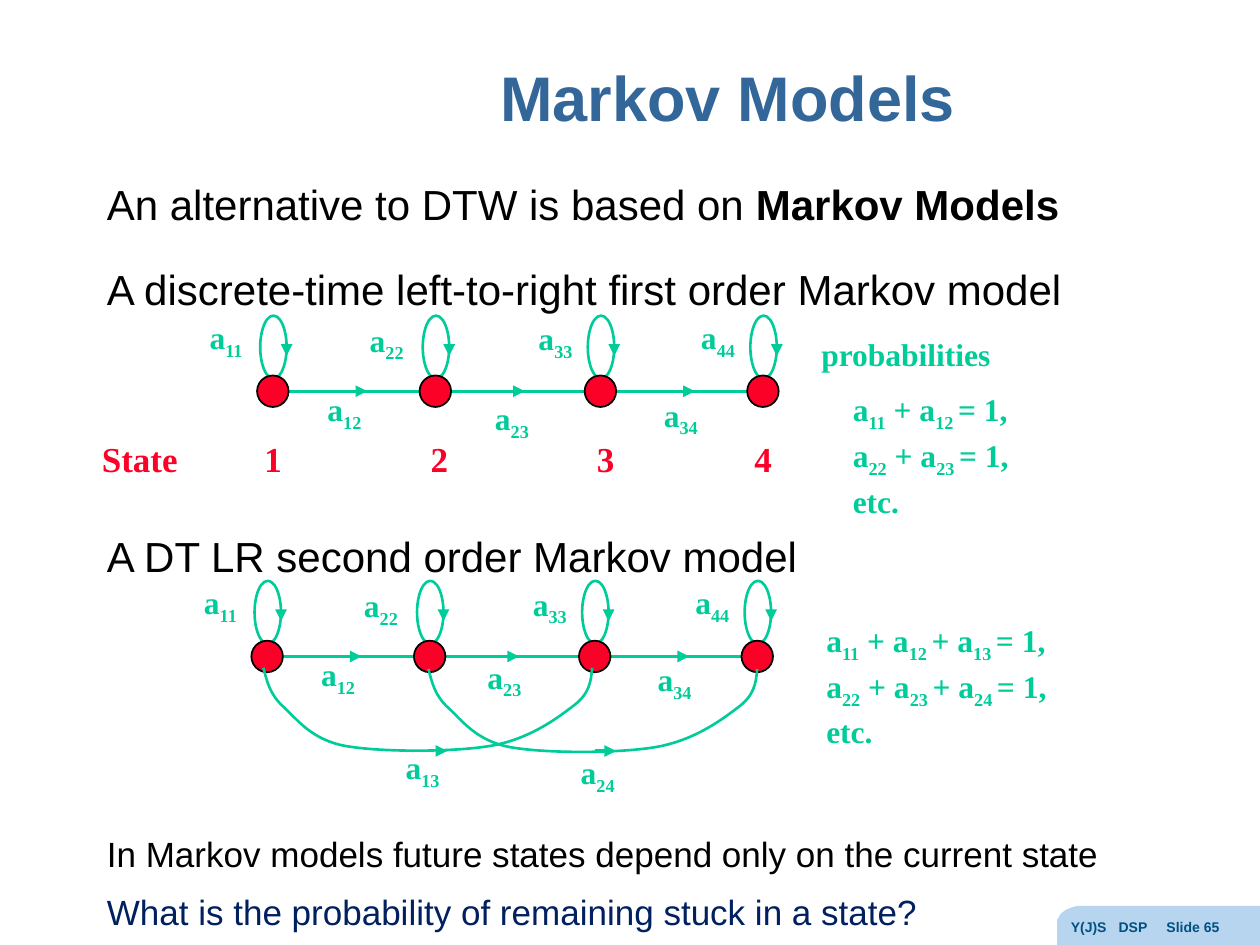
from itertools import pairwise

from lxml.etree import SubElement
from pptx import Presentation
from pptx.dml.color import RGBColor
from pptx.enum.shapes import MSO_CONNECTOR as Connector, MSO_SHAPE as Shape
from pptx.enum.text import MSO_ANCHOR as Anchor, PP_ALIGN as Align
from pptx.oxml.ns import qn
from pptx.util import Inches, Pt

GREEN = "00CC99"
RED = "FC0128"
BLACK = "000000"
SERIF = "Times New Roman"
STATE_OFFSETS = [0, 1.29, 2.6, 3.89]
ARROW_OFFSETS = [0.66, 0.62, 0.66]
SELF_LABELS = [("11", -0.6, -0.63), ("22", -0.62, -0.61), ("33", -0.59, -0.62), ("44", -0.59, -0.63)]
SKIP_CURVE = [
    [(0.03, 0.11), (0.05, 0.21), (0.16, 0.31)],
    [(0.27, 0.41), (0.38, 0.57), (0.65, 0.62)],
    [(0.93, 0.67), (1.5, 0.67), (1.8, 0.62)],
    [(2.1, 0.57), (2.32, 0.41), (2.45, 0.31)],
    [(2.59, 0.21), (2.6, 0.11), (2.61, 0)],
]
TAB_GAP = "\t"


def color(value):
    return RGBColor.from_string(value)


def style(shape, fill=None, line=None, weight=1):
    shape.shadow.inherit = False
    if fill:
        shape.fill.solid()
        shape.fill.fore_color.rgb = color(fill)
    else:
        shape.fill.background()
    if line:
        shape.line.color.rgb = color(line)
        shape.line.width = Pt(weight)
    else:
        shape.line.fill.background()


def add_ellipse(shapes, left, top, width, height, **look):
    ellipse = shapes.add_shape(Shape.OVAL, Inches(left), Inches(top), Inches(width), Inches(height))
    style(ellipse, **look)


def add_line(shapes, start, end, weight=1.5, arrow=False):
    line = shapes.add_connector(Connector.STRAIGHT, *map(Inches, (*start, *end)))
    line.line.color.rgb = color(GREEN)
    line.line.width = Pt(weight)
    if arrow:
        SubElement(line.line._get_or_add_ln(), qn("a:tailEnd"), type="triangle")
    SubElement(line._element.spPr, qn("a:effectLst"))


def add_outline(shapes, points, close=False, **look):
    corners = [(Inches(x), Inches(y)) for x, y in points]
    builder = shapes.build_freeform(*corners[0])
    builder.add_line_segments(corners[1:], close=close)
    outline = builder.convert_to_shape()
    style(outline, **look)
    return outline


def add_paragraph(paragraph, text, size=18, font=SERIF, fill=GREEN, bold=True,
                  accent="subscript", before=0, align=Align.LEFT, spacing=1.0, tabs=()):
    paragraph.alignment = align
    paragraph.space_before = Pt(before)
    paragraph.line_spacing = spacing
    if tabs:
        tab_list = SubElement(paragraph._p.get_or_add_pPr(), qn("a:tabLst"))
        for stop in tabs:
            SubElement(tab_list, qn("a:tab"), pos=str(Inches(stop)), algn="l")
    for index, part in enumerate(text.split("|")):
        run = paragraph.add_run()
        run.text = part
        run.font.name = font
        run.font.size = Pt(size)
        run.font.color.rgb = color(fill)
        accented = index % 2 == 1
        run.font.bold = bold or (accented and accent == "bold")
        if accented and accent == "subscript":
            run._r.get_or_add_rPr().set("baseline", "-25000")


def add_text(shapes, left, top, width, height, lines, anchor=Anchor.TOP, margin_top=0.05, **common):
    box = shapes.add_textbox(Inches(left), Inches(top), Inches(width), Inches(height))
    frame = box.text_frame
    frame.word_wrap = True
    frame.vertical_anchor = anchor
    frame.margin_top = Inches(margin_top)
    for index, (text, extra) in enumerate(lines):
        paragraph = frame.add_paragraph() if index else frame.paragraphs[0]
        add_paragraph(paragraph, text, **{**common, **extra})


def add_label(shapes, indices, left, top):
    add_text(shapes, left, top, 0.58, 0.4, [(f"a|{indices}", {})])


def add_equations(slide, left, top, equations):
    add_text(slide.shapes, left, top, 2.77, 1.06, [(text, {}) for text in equations], before=1.6)


def add_skip(shapes, left, top, arrow_start, arrow_end):
    ends = [(0, 0)] + [segment[-1] for segment in SKIP_CURVE]
    outline = add_outline(shapes, [(left + x, top + y) for x, y in ends], line=GREEN, weight=1.5)
    straights = list(outline._element.iter(qn("a:lnTo")))
    for straight, segment in zip(straights, SKIP_CURVE):
        curve = straight.makeelement(qn("a:cubicBezTo"))
        for x, y in segment:
            SubElement(curve, qn("a:pt"), x=str(Inches(x)), y=str(Inches(y)))
        straight.getparent().replace(straight, curve)
    add_line(shapes, (arrow_start, 5.96), (arrow_end, 5.96), 2.25, arrow=True)


def add_chain(slide, left, y, step_labels):
    shapes = slide.shapes.add_group_shape().shapes
    states = [left + offset for offset in STATE_OFFSETS]
    for x, (indices, label_x, label_y) in zip(states, SELF_LABELS):
        add_ellipse(shapes, x - 0.1, y - 0.6, 0.21, 0.5, line=GREEN, weight=1.5)
        add_line(shapes, (x + 0.11, y - 0.36), (x + 0.11, y - 0.28), 2.25, arrow=True)
        add_label(shapes, indices, x + label_x, y + label_y)
    for (x, following), arrow_offset in zip(pairwise(states), ARROW_OFFSETS):
        add_line(shapes, (x + 0.12, y), (following - 0.12, y))
        arrow_start = x + arrow_offset
        add_line(shapes, (arrow_start, y), (arrow_start + 0.09, y), 2.25, arrow=True)
    for x in states:
        add_ellipse(shapes, x - 0.125, y - 0.125, 0.25, 0.25, fill=RED, line=BLACK)
    for label in step_labels:
        add_label(shapes, *label)
    return shapes


def add_footer(slide):
    corner = [(10, 7.19), (10, 7.5), (8.39, 7.5), (8.39, 7.34), (8.39, 7.3), (8.42, 7.25),
              (8.46, 7.22), (8.51, 7.2), (8.55, 7.19)]
    add_outline(slide.shapes, corner, close=True, fill="B7D5EF")
    footer = TAB_GAP.join(["Y(J)S", "DSP", "Slide 65"])
    add_text(slide.shapes, 8.4, 7.24, 1.6, 0.26, [(footer, {"tabs": (0.38, 0.76)})],
             size=8, font="Arial", fill="005081")


def main():
    presentation = Presentation()
    presentation.slide_width, presentation.slide_height = Inches(10), Inches(7.5)
    slide = presentation.slides.add_slide(presentation.slide_layouts[6])
    add_footer(slide)
    add_text(slide.shapes, 2.12, 0.18, 7.31, 1.25, [("Markov Models", {})], anchor=Anchor.MIDDLE,
             size=36, font="Arial", fill="336699", align=Align.CENTER, spacing=0.9)
    add_text(slide.shapes, 0.75, 1.28, 8.5, 4.5, [
        ("An alternative to DTW is based on |Markov Models", {}),
        ("A discrete-time left-to-right first order Markov model", {"before": 19.3}),
        ("A DT LR second order Markov model", {"before": 124}),
        ("In Markov models future states depend only on the current state", {"before": 144, "size": 20}),
        ("What is the probability of remaining stuck in a state?",
         {"before": 8.8, "size": 20, "fill": "002060"}),
    ], margin_top=0.14, size=24, font="Arial", fill=BLACK, bold=False, accent="bold")
    states = TAB_GAP.join(["State", "1", "2", "3", "4"])
    add_text(slide.shapes, 0.71, 3.42, 6.26, 0.44,
             [(states, {"tabs": (1.29, 2.61, 3.93, 5.18)})], size=20, fill=RED)

    add_chain(slide, 2.165, 3.105, [("12", 2.5, 3.05), ("23", 3.83, 3.12), ("34", 5.17, 3.09)])
    add_text(slide.shapes, 6.42, 2.61, 1.58, 0.4, [("probabilities", {})])
    add_equations(slide, 6.67, 3.05, ["a|11| + a|12 |= 1,", "a|22| + a|23 |= 1,", "etc."])

    second = add_chain(slide, 2.12, 5.21, [("12", 2.45, 5.15), ("23", 3.77, 5.17), ("34", 5.12, 5.19),
                                           ("13", 3.12, 5.89), ("24", 4.51, 5.93)])
    add_skip(second, 2.09, 5.3, 3.47, 3.55)
    add_skip(second, 3.4, 5.31, 4.72, 4.89)
    add_equations(slide, 6.46, 4.88,
                  ["a|11| + a|12 |+ a|13 |= 1,", "a|22| + a|23 |+ a|24 |= 1,", "etc."])
    presentation.save("out.pptx")


if __name__ == "__main__":
    main()
